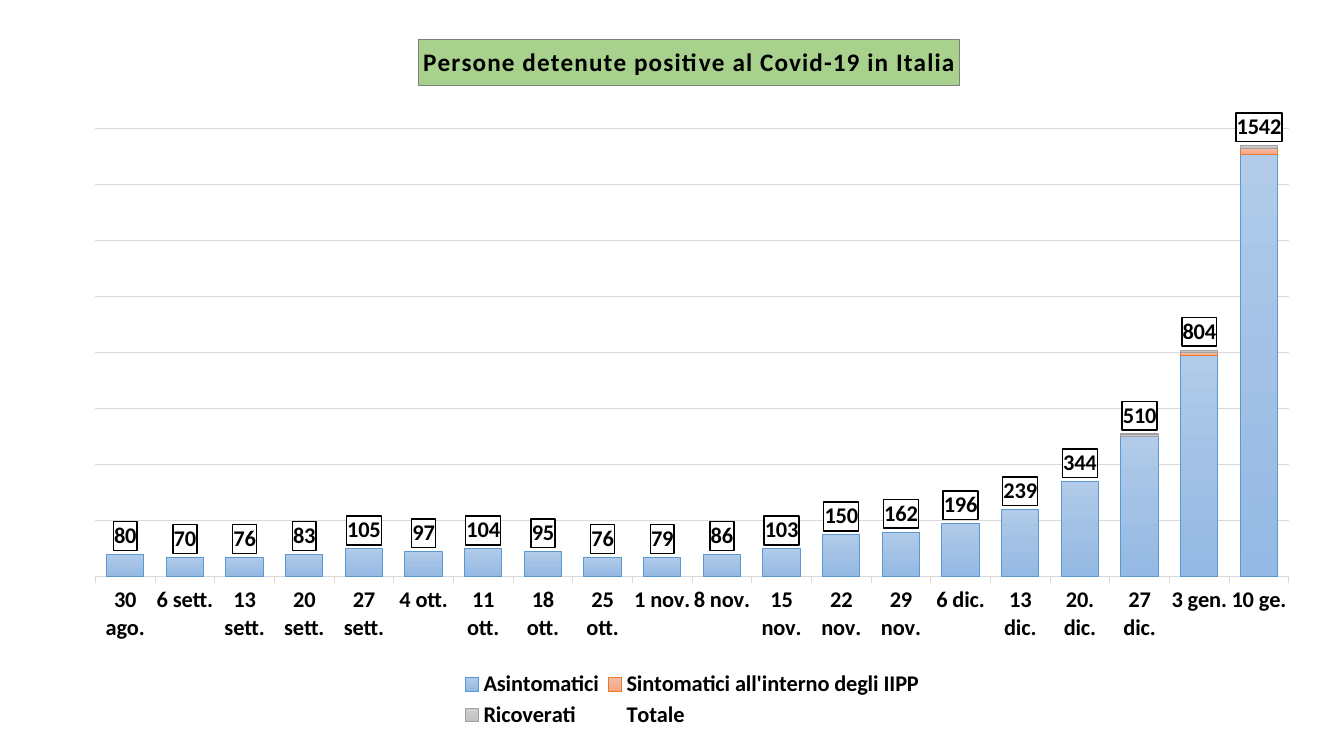
from lxml import etree
from pptx import Presentation
from pptx.chart.data import CategoryChartData
from pptx.dml.color import RGBColor
from pptx.enum.chart import (XL_CHART_TYPE, XL_LABEL_POSITION,
                             XL_LEGEND_POSITION, XL_TICK_MARK)
from pptx.oxml import parse_xml
from pptx.oxml.ns import qn
from pptx.util import Inches, Pt

STACKED = XL_CHART_TYPE.COLUMN_STACKED
BOTTOM = XL_LEGEND_POSITION.BOTTOM
BASE = XL_LABEL_POSITION.INSIDE_BASE
OUT, NONE = XL_TICK_MARK.OUTSIDE, XL_TICK_MARK.NONE

COLORS = {"text": "000000", "grid": "D9D9D9", "label": "FFFFFF",
          "title": "A9D18E", "edge": "7F7F7F"}
FONT = {"name": "Calibri", "size": Pt(16), "bold": True}
NS = ('xmlns:c="http://schemas.openxmlformats.org/drawingml/2006/chart" '
      'xmlns:a="http://schemas.openxmlformats.org/drawingml/2006/main"')

TITLE = "Persone detenute positive al Covid-19 in Italia"
DATES = ["30 ago.", "6 sett.", "13 sett.", "20 sett.", "27 sett.", "4 ott.",
         "11 ott.", "18 ott.", "25 ott.", "1 nov.", "8 nov.", "15 nov.",
         "22 nov.", "29 nov.", "6 dic.", "13 dic.", "20. dic.", "27 dic.",
         "3 gen.", "10 ge."]
CASES = {
    "Asintomatici": [80, 70, 70, 80, 100, 90, 100, 90, 70, 70, 80, 100, 150,
                     160, 190, 240, 340, 500, 790, 1510],
    "Sintomatici all'interno degli IIPP": [0] * 18 + [10, 20],
    "Ricoverati": [0] * 17 + [10] * 3,
    "Totale": [80, 70, 76, 83, 105, 97, 104, 95, 76, 79, 86, 103, 150, 162,
               196, 239, 344, 510, 804, 1542],
}
# Gradient stops from top to bottom, then the outline
STYLES = [(("B1CBE9", "A3C1E5", "93B9E4"), "5998D0"),
          (("F7BDA5", "F5B196", "F8A582"), "E87A30"),
          (("D2D2D2", "C8C8C8", "C0C0C0"), "A1A1A1")]


def set_font(font):
    for key, value in FONT.items():
        setattr(font, key, value)
    font.color.rgb = RGBColor.from_string(COLORS["text"])


def set_line(line, color):
    line.color.rgb = RGBColor.from_string(color)
    line.width = Pt(0.75)


def set_place(node, index, inner=False, **spots):
    """Place a chart part by fractions of the chart."""
    for old in node.findall(qn("c:layout")):
        node.remove(old)
    target = '<c:layoutTarget val="inner"/>' if inner else ""
    modes = "".join(f'<c:{k}Mode val="edge"/>' for k in "xy")
    sizes = "".join(f'<c:{k} val="{v}"/>' for k, v in spots.items())
    node.insert(index, parse_xml(
        f"<c:layout {NS}><c:manualLayout>{target}{modes}{sizes}"
        "</c:manualLayout></c:layout>"))


def make_frame(fill, edge, width):
    return parse_xml(
        f'<c:spPr {NS}><a:solidFill><a:srgbClr val="{fill}"/></a:solidFill>'
        f'<a:ln w="{Pt(width)}"><a:solidFill><a:srgbClr val="{edge}"/>'
        '</a:solidFill></a:ln></c:spPr>')


def add_title(chart):
    title = chart.chart_title
    para = title.text_frame.paragraphs[0]
    run = para.add_run()
    run.text = TITLE
    set_font(run.font)
    run.font.size = Pt(18)
    run.font._element.set("spc", "80")
    node = title._element
    set_place(node, 1, x=0.28, y=0.03)
    title.include_in_layout = False
    node.find(qn("c:overlay")).addnext(
        make_frame(COLORS["title"], COLORS["edge"], 0.75))


def style_bars(plot):
    plot.gap_width, plot.overlap = 60, 100
    plot.vary_by_categories = False
    for bars, (stops, edge) in zip(plot.series, STYLES):
        marks = "".join(
            f'<a:gs pos="{i * 50000}"><a:srgbClr val="{c}"/></a:gs>'
            for i, c in enumerate(stops))
        bars._element.get_or_add_spPr().insert(0, parse_xml(
            f"<a:gradFill {NS}><a:gsLst>{marks}</a:gsLst>"
            '<a:lin ang="5400000" scaled="0"/></a:gradFill>'))
        set_line(bars.format.line, edge)


def add_totals(total):
    """Leave the total bars clear and box their values."""
    total.format.fill.background()
    total.format.line.fill.background()
    labels = total.data_labels
    labels.show_value = True
    labels.position = BASE
    set_font(labels.font)
    labels._element.find(qn("c:txPr")).addprevious(
        make_frame(COLORS["label"], COLORS["text"], 1))


def style_axes(chart):
    dates, count = chart.category_axis, chart.value_axis
    dates.major_tick_mark, dates.minor_tick_mark = OUT, NONE
    set_font(dates.tick_labels.font)
    set_line(dates.format.line, COLORS["grid"])
    scale = {"minimum_scale": 0, "maximum_scale": 1700, "major_unit": 200,
             "has_major_gridlines": True, "visible": False}
    for key, value in scale.items():
        setattr(count, key, value)
    set_line(count.major_gridlines.format.line, COLORS["grid"])


def add_legend(chart):
    chart.has_legend = True
    legend = chart.legend
    legend.position = BOTTOM
    legend.include_in_layout = False
    set_font(legend.font)
    set_place(legend._element, 1, x=0.31, y=0.91, w=0.38, h=0.09)


def add_cases(slide, left, top, width, height):
    data = CategoryChartData()
    data.categories = DATES
    for name, values in CASES.items():
        data.add_series(name, values)
    chart = slide.shapes.add_chart(
        STACKED, left, top, width, height, data).chart
    set_font(chart.font)
    add_title(chart)
    plot = chart.plots[0]
    style_bars(plot)
    add_totals(plot.series[len(STYLES)])
    style_axes(chart)
    add_legend(chart)
    area = chart._chartSpace.find(".//" + qn("c:plotArea"))
    set_place(area, 0, inner=True, x=0.02, y=0.116, w=0.96, h=0.667)


def main():
    deck = Presentation()
    deck.slide_width, deck.slide_height = Inches(13.33), Inches(7.5)
    slide = deck.slides.add_slide(deck.slide_layouts[6])
    add_cases(slide, Inches(0.7), Inches(0.18), Inches(12.33), Inches(7.08))
    deck.save("out.pptx")


if __name__ == "__main__":
    main()
